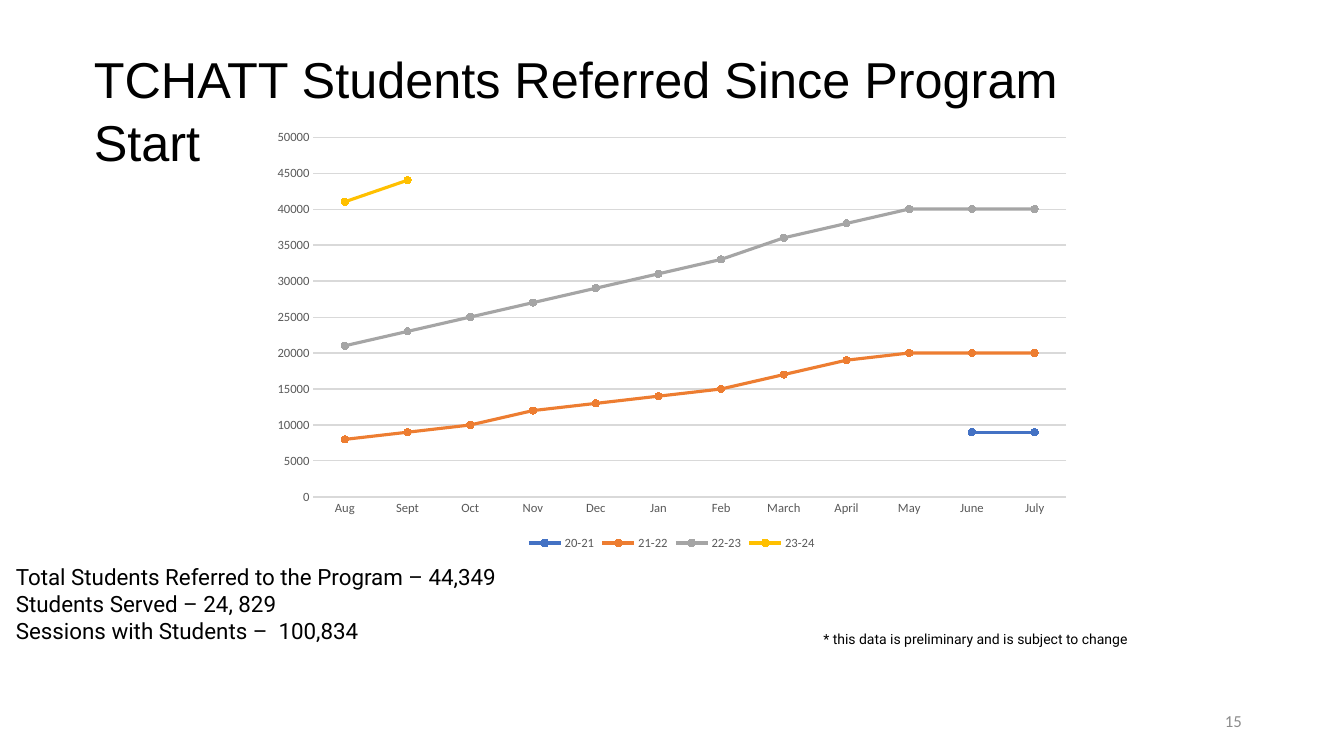
from pptx import Presentation
from pptx import util as u
from pptx.chart.data import CategoryChartData
from pptx.dml.color import RGBColor
from pptx.enum import chart as ch
from pptx.enum import text as tx

MONTHS = ["Aug", "Sept", "Oct", "Nov", "Dec", "Jan",
          "Feb", "March", "April", "May", "June", "July"]
YEARS = [
    ("20-21", "4472C4", [None] * 10 + [9000, 9000]),
    ("21-22", "ED7D31", [8000, 9000, 10000, 12000, 13000, 14000,
                         15000, 17000, 19000, 20000, 20000, 20000]),
    ("22-23", "A5A5A5", [21000, 23000, 25000, 27000, 29000, 31000,
                         33000, 36000, 38000, 40000, 40000, 40000]),
    ("23-24", "FFC000", [41000, 44000] + [None] * 10),
]
FACTS = ["Total Students Referred to the Program – 44,349",
         "Students Served – 24, 829",
         "Sessions with Students –  100,834"]


def color(code):
    return RGBColor.from_string(code)


def style(font, name, size, code):
    font.name = name
    font.size = u.Pt(size)
    font.color.rgb = color(code)


def stroke(line, code, width):
    line.color.rgb = color(code)
    line.width = u.Pt(width)


def write(frame, lines, name, size, code="000000", align=tx.PP_ALIGN.LEFT):
    frame.word_wrap = True
    for i, words in enumerate(lines):
        para = frame.add_paragraph() if i else frame.paragraphs[0]
        para.alignment = align
        run = para.add_run()
        run.text = words
        style(run.font, name, size, code)


def head(slide, box, words):
    title = slide.shapes.title
    title.left, title.top, title.width, title.height = map(u.Cm, box)
    frame = title.text_frame
    frame.auto_size = tx.MSO_AUTO_SIZE.NONE
    frame.vertical_anchor = tx.MSO_ANCHOR.TOP
    write(frame, [words], "Arial", 36)
    frame.paragraphs[0].line_spacing = 1.05


def note(slide, box, lines, name, size, **look):
    frame = slide.shapes.add_textbox(*map(u.Cm, box)).text_frame
    write(frame, lines, name, size, **look)
    return frame


def page(slide, box, num):
    frame = note(slide, box, [num], "Calibri", 12,
                 code="8C8C8C", align=tx.PP_ALIGN.RIGHT)
    frame.vertical_anchor = tx.MSO_ANCHOR.MIDDLE


def graph(slide, box):
    data = CategoryChartData(number_format="General")
    data.categories = MONTHS
    for name, _, vals in YEARS:
        data.add_series(name, vals)
    chart = slide.shapes.add_chart(
        ch.XL_CHART_TYPE.LINE_MARKERS, *map(u.Cm, box), data).chart
    style(chart.font, "Calibri", 10, "000000")
    chart.has_title = False
    chart.has_legend = True
    chart.legend.position = ch.XL_LEGEND_POSITION.BOTTOM
    chart.legend.include_in_layout = False
    style(chart.legend.font, "Calibri", 9, "595959")

    months, count = chart.category_axis, chart.value_axis
    for axis in (months, count):
        axis.major_tick_mark = axis.minor_tick_mark = ch.XL_TICK_MARK.NONE
        style(axis.tick_labels.font, "Calibri", 9, "595959")
    stroke(months.format.line, "D9D9D9", 0.75)
    count.minimum_scale, count.maximum_scale = 0, 50000
    count.major_unit = 5000
    count.format.line.fill.background()
    stroke(count.major_gridlines.format.line, "D9D9D9", 0.75)

    plot = chart.plots[0]
    plot.vary_by_categories = False
    for series, (_, code, _) in zip(plot.series, YEARS):
        series.smooth = False
        stroke(series.format.line, code, 2.25)
        mark = series.marker
        mark.style = ch.XL_MARKER_STYLE.CIRCLE
        mark.size = 5
        mark.format.fill.solid()
        mark.format.fill.fore_color.rgb = color(code)
        stroke(mark.format.line, code, 0.75)


def main():
    deck = Presentation()
    deck.slide_width, deck.slide_height = u.Cm(33.87), u.Cm(19.05)
    slide = deck.slides.add_slide(deck.slide_layouts[5])
    page(slide, (23.93, 17.65, 7.62, 1.02), "15")
    head(slide, (2.11, 1, 26.87, 1.8),
         "TCHATT Students Referred Since Program Start")
    note(slide, (0.15, 14.07, 16.94, 2.39), FACTS, "Roboto", 16)
    note(slide, (20.5, 15.77, 16.94, 0.69),
         ["* this data is preliminary and is subject to change"], "Roboto", 10)
    graph(slide, (6.58, 3.05, 20.7, 10.92))
    deck.save("out.pptx")


if __name__ == "__main__":
    main()
